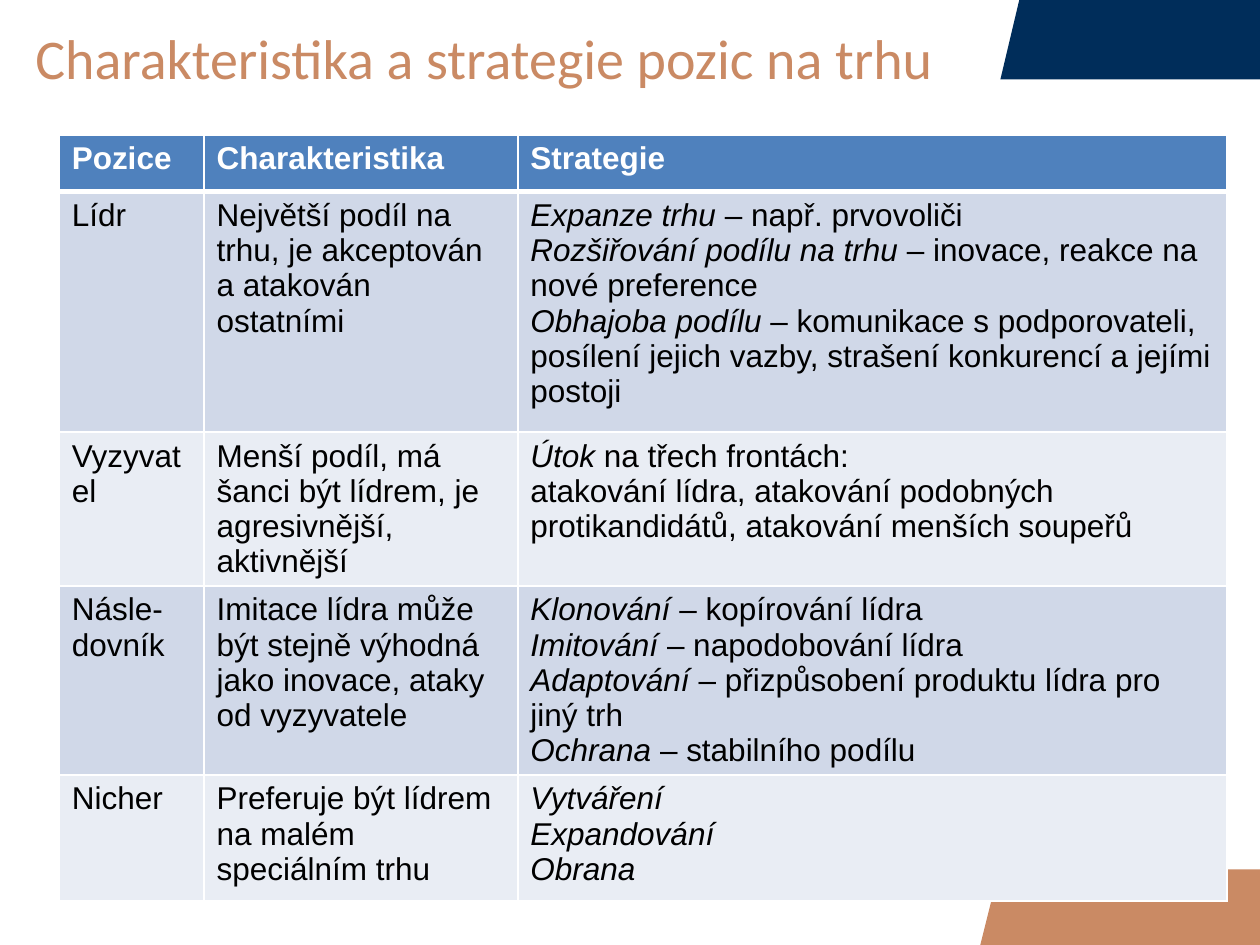
"""Build a slide with a table of market positions and their strategies."""
from lxml.etree import SubElement
from pptx import Presentation
from pptx.dml.color import RGBColor
from pptx.enum.text import MSO_ANCHOR, MSO_AUTO_SIZE, PP_ALIGN
from pptx.oxml.ns import qn
from pptx.util import Inches, Pt

COLORS = {
    "navy": "002D5A", "copper": "CA8A64", "header": "4F81BD",
    "band_dark": "D0D8E8", "band_light": "E9EDF4",
    "white": "FFFFFF", "black": "000000",
}
TITLE = "Charakteristika a strategie pozic na trhu"
HEADERS = ["Pozice", "Charakteristika", "Strategie"]
# Each strategy line is a pair: italic lead, plain rest.
POSITIONS = [
    ("Lídr", "Největší podíl na trhu, je akceptován a atakován ostatními", [
        ("Expanze trhu ", "– např. prvovoliči"),
        ("Rozšiřování podílu na trhu ", "– inovace, reakce na nové preference"),
        ("Obhajoba podílu ", "– komunikace s podporovateli, posílení jejich vazby, "
                             "strašení konkurencí a jejími postoji"),
    ]),
    ("Vyzyvatel", "Menší podíl, má šanci být lídrem, je agresivnější, aktivnější", [
        ("Útok ", "na třech frontách:"),
        ("", "atakování lídra, atakování podobných protikandidátů, atakování menších soupeřů"),
    ]),
    ("Násle-dovník", "Imitace lídra může být stejně výhodná jako inovace, ataky od vyzyvatele", [
        ("Klonování ", "– kopírování lídra"),
        ("Imitování ", "– napodobování lídra"),
        ("Adaptování ", "– přizpůsobení produktu lídra pro jiný trh"),
        ("Ochrana", " – stabilního podílu"),
    ]),
    ("Nicher", "Preferuje být lídrem na malém speciálním trhu", [
        ("Vytváření", ""), ("Expandování", ""), ("Obrana", ""),
    ]),
]
COLUMN_WIDTHS = [1.15, 2.49, 5.63]
ROW_HEIGHTS = [0.45, 1.91, 1.04, 1.3, 1]
CORNERS = [
    ("navy", [(7.94, 0.63), (8.09, 0), (10, 0), (10, 0.63)]),
    ("copper", [(7.78, 7.5), (7.93, 6.9), (10, 6.9), (10, 7.5)]),
]


def rgb(name):
    return RGBColor.from_string(COLORS[name])


def write_text(frame, text, size=18, font="Arial", color="black", bold=False):
    """Write a string, or a list of (italic, plain) lines, into a text frame."""
    lines = [("", text)] if isinstance(text, str) else text
    for index, line in enumerate(lines):
        paragraph = frame.add_paragraph() if index else frame.paragraphs[0]
        paragraph.alignment = PP_ALIGN.LEFT
        for content, italic in zip(line, (True, False)):
            if content:
                run = paragraph.add_run()
                run.text = content
                run.font.size, run.font.name = Pt(size), font
                run.font.bold, run.font.italic = bold, italic
                run.font.color.rgb = rgb(color)


def set_borders(cell, bottom):
    properties = cell._tc.get_or_add_tcPr()
    for side, width in (("L", 1), ("R", 1), ("T", 1), ("B", bottom)):
        line = SubElement(properties, qn(f"a:ln{side}"), w=str(Pt(width)))
        fill = SubElement(line, qn("a:solidFill"))
        SubElement(fill, qn("a:srgbClr"), val=COLORS["white"])


def add_corner(slide, color, points):
    corner = [(Inches(x), Inches(y)) for x, y in points]
    builder = slide.shapes.build_freeform(*corner[0])
    builder.add_line_segments(corner[1:], close=True)
    shape = builder.convert_to_shape()
    shape.shadow.inherit = False
    shape.fill.solid()
    shape.fill.fore_color.rgb = rgb(color)
    shape.line.fill.background()


def add_title(slide):
    title = slide.shapes.title
    title.left, title.top, title.width, title.height = (
        Inches(value) for value in (0, 0, 10, 0.9))
    frame = title.text_frame
    frame.word_wrap, frame.auto_size = True, MSO_AUTO_SIZE.NONE
    frame.vertical_anchor = MSO_ANCHOR.MIDDLE
    frame.margin_left = frame.margin_right = Inches(0.28)
    write_text(frame, TITLE, size=32, font="Calibri", color="copper")


def add_position_table(slide):
    rows = [HEADERS, *POSITIONS]
    table = slide.shapes.add_table(
        len(rows), len(HEADERS), Inches(0.47), Inches(1.07),
        Inches(sum(COLUMN_WIDTHS)), Inches(sum(ROW_HEIGHTS))).table
    for column, width in zip(table.columns, COLUMN_WIDTHS):
        column.width = Inches(width)
    for index, (row, height, texts) in enumerate(zip(table.rows, ROW_HEIGHTS, rows)):
        row.height = Inches(height)
        is_header = index == 0
        band = "header" if is_header else ("band_light", "band_dark")[index % 2]
        for cell, text in zip(row.cells, texts):
            set_borders(cell, bottom=3 if is_header else 1)
            cell.fill.solid()
            cell.fill.fore_color.rgb = rgb(band)
            write_text(cell.text_frame, text, bold=is_header,
                       color="white" if is_header else "black")


def main():
    presentation = Presentation()
    presentation.slide_width, presentation.slide_height = Inches(10), Inches(7.5)
    slide = presentation.slides.add_slide(presentation.slide_layouts[5])
    for color, points in CORNERS:
        add_corner(slide, color, points)
    add_title(slide)
    add_position_table(slide)
    presentation.save("out.pptx")


if __name__ == "__main__":
    main()
